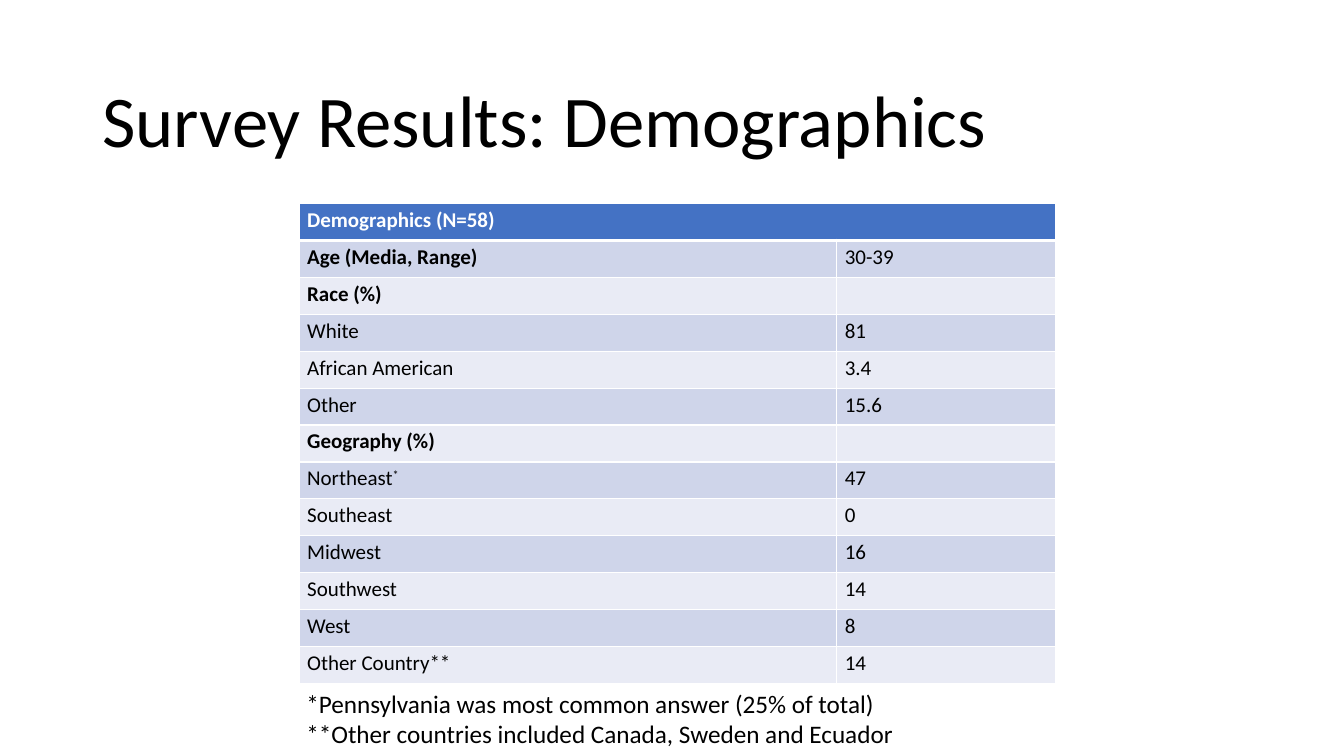
from lxml.etree import SubElement
from pptx import Presentation
from pptx.dml.color import RGBColor
from pptx.enum.text import MSO_ANCHOR
from pptx.oxml.ns import qn
from pptx.util import Cm, Pt

COLORS = {"text": "000000", "white": "FFFFFF", "header": "4472C4",
          "band_dark": "CFD5EA", "band_light": "E9EBF5"}
ROWS = [("Demographics (N=58)", ""), ("Age (Media, Range)", "30-39"),
        ("Race (%)", ""), ("White", "81"), ("African American", "3.4"),
        ("Other", "15.6"), ("Geography (%)", ""), ("Northeast^*", "47"),
        ("Southeast", "0"), ("Midwest", "16"), ("Southwest", "14"),
        ("West", "8"), ("Other Country**", "14")]
BOLD_ROWS = {0, 1, 2, 6}


def rgb(name):
    return RGBColor.from_string(COLORS[name])


class SlideBuilder:
    def __init__(self, prs, font="Calibri"):
        self.font = font
        self.s = prs.slides.add_slide(prs.slide_layouts[6])

    def run(self, p, text, size, color="text", bold=False):
        r = p.add_run()
        r.text = text
        formats = {"name": self.font, "size": Pt(size), "bold": bold}
        for key, value in formats.items():
            setattr(r.font, key, value)
        r.font.color.rgb = rgb(color)
        return r

    def text(self, box, lines, size, anchor=MSO_ANCHOR.TOP, spacing=1.0):
        tf = self.s.shapes.add_textbox(*map(Cm, box)).text_frame
        formats = {"word_wrap": True, "vertical_anchor": anchor}
        for key, value in formats.items():
            setattr(tf, key, value)
        for i, line in enumerate(lines):
            p = tf.add_paragraph() if i else tf.paragraphs[0]
            p.line_spacing = spacing
            self.run(p, line, size)

    def borders(self, cell, widths):
        """Draw white left, right, top and bottom borders, widths in points."""
        tc_pr = cell._tc.get_or_add_tcPr()
        for i, (side, width) in enumerate(zip("LRTB", widths)):
            ln = SubElement(tc_pr, qn(f"a:ln{side}"), w=str(Pt(width)))
            fill = SubElement(ln, qn("a:solidFill"))
            SubElement(fill, qn("a:srgbClr"), val=COLORS["white"])
            tc_pr.insert(i, ln)

    def cell(self, cell, text, fill, color, bold, size=15):
        """Fill a cell; text after ^ is superscript."""
        margins = {"margin_left": 0.2, "margin_right": 0.2,
                   "margin_top": 0.1, "margin_bottom": 0.1}
        for key, value in margins.items():
            setattr(cell, key, Cm(value))
        cell.fill.solid()
        cell.fill.fore_color.rgb = rgb(fill)
        p = cell.text_frame.paragraphs[0]
        base, _, raised = text.partition("^")
        if base:
            self.run(p, base, size, color, bold)
        if raised:
            r = self.run(p, raised, size, color, bold)
            r.font._element.set("baseline", "30000")
        SubElement(p._p, qn("a:endParaRPr"), sz=str(size * 100))

    def table(self, left, top, col_widths, row_height, rows, bold_rows):
        table = self.s.shapes.add_table(
            len(rows), len(col_widths), Cm(left), Cm(top),
            Cm(sum(col_widths)), Cm(row_height * len(rows))).table
        for column, width in zip(table.columns, col_widths):
            column.width = Cm(width)
        for i, row in enumerate(rows):
            table.rows[i].height = Cm(row_height)
            band = "band_dark" if i % 2 else "band_light"
            for j, text in enumerate(row):
                cell = table.cell(i, j)
                self.cell(cell, text, band if i else "header",
                          "text" if i else "white", i in bold_rows and j == 0)
                self.borders(cell, (1, 1, 3 if i == 1 else 1, 1 if i else 3))
        table.cell(0, 0).merge(table.cell(0, len(col_widths) - 1))


def main():
    prs = Presentation()
    prs.slide_width, prs.slide_height = Cm(33.87), Cm(19.05)
    slide = SlideBuilder(prs)
    slide.text((2.33, 1.55, 29.21, 3.15), ["Survey Results: Demographics"], 52,
               MSO_ANCHOR.MIDDLE, 0.9)
    slide.table(7.54, 5.13, (13.55, 5.5), 0.93, ROWS, BOLD_ROWS)
    slide.text((7.47, 17.22, 18.95, 1.8),
               ["*Pennsylvania was most common answer (25% of total)",
                "**Other countries included Canada, Sweden and Ecuador"], 18)
    prs.save("out.pptx")


if __name__ == "__main__":
    main()
